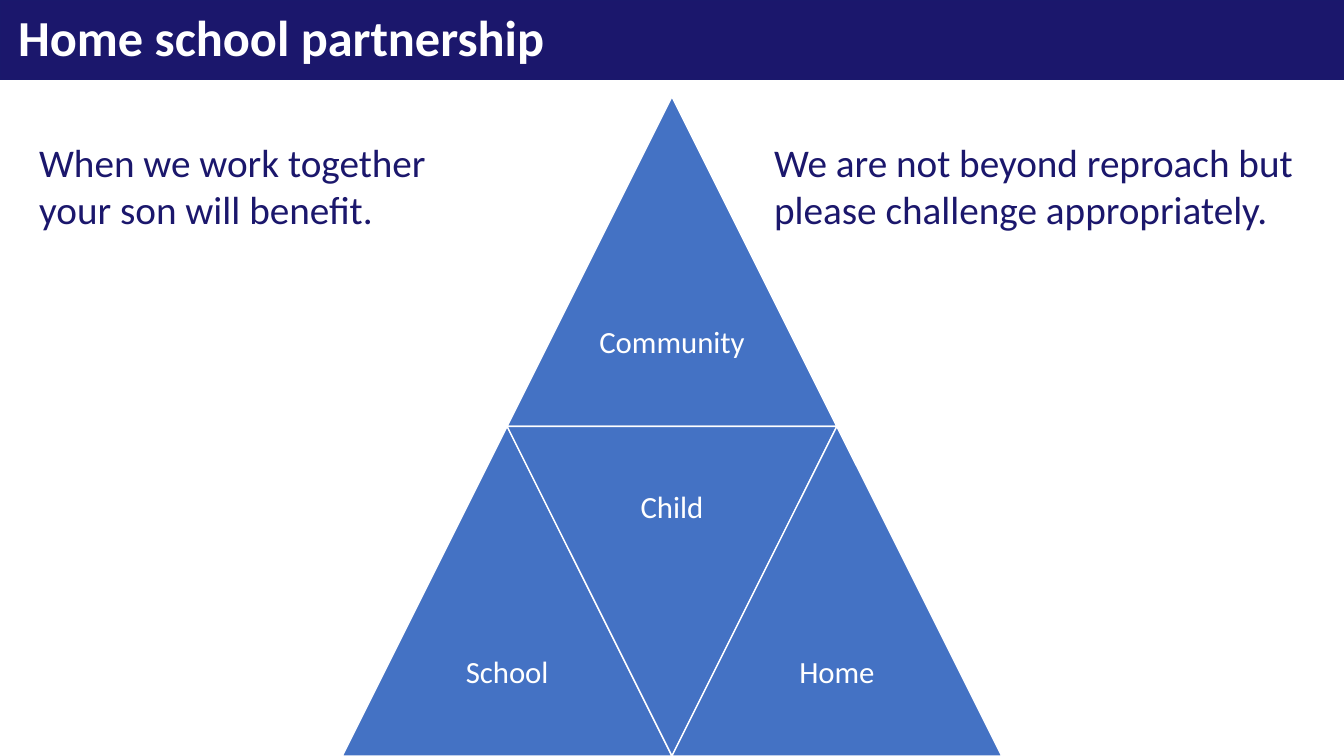
"""Build the home school partnership slide."""
from pptx import Presentation
from pptx.dml.color import RGBColor
from pptx.enum import shapes, text
from pptx.util import Inches, Pt

HUES = {"navy": "1B176C", "edge": "1A186C", "blue": "4472C4", "white": "FFFFFF"}
SHAPE = shapes.MSO_SHAPE
ALIGN = text.PP_ALIGN
ANCHOR = text.MSO_ANCHOR


def draw(kind, box, fill, line):
    item = slide.shapes.add_shape(kind, *map(Inches, box))
    item.shadow.inherit = False
    item.fill.solid()
    item.fill.fore_color.rgb = RGBColor.from_string(HUES[fill])
    item.line.color.rgb = RGBColor.from_string(HUES[line])
    item.line.width = Pt(1)
    return item


def write(item, words, size, hue, align=ALIGN.LEFT, anchor=ANCHOR.TOP, space=1.0, bold=False):
    frame = item.text_frame
    frame.word_wrap = True
    frame.auto_size = text.MSO_AUTO_SIZE.NONE
    frame.vertical_anchor = anchor
    frame.text = words
    para = frame.paragraphs[0]
    para.alignment = align
    para.line_spacing = space
    style = {"name": "Calibri", "size": Pt(size), "bold": bold}
    for key, value in style.items():
        setattr(para.font, key, value)
    para.font.color.rgb = RGBColor.from_string(HUES[hue])


deck = Presentation()
deck.slide_width, deck.slide_height = Inches(13.33), Inches(7.5)
slide = deck.slides.add_slide(deck.slide_layouts[5])

bar = draw(SHAPE.RECTANGLE, (0, 0, 13.33, 0.79), "navy", "edge")
title = slide.shapes.title
title._element.addprevious(bar._element)
title.left, title.top, title.width, title.height = map(Inches, (0.08, 0, 12.6, 0.79))
write(title, "Home school partnership", 36, "white", anchor=ANCHOR.MIDDLE, space=0.9, bold=True)

side, left, top = 3.27, 5.03, 0.96
half = side / 2
parts = [
    ("Community", 0, 0, False),
    ("School", -1, 1, False),
    ("Child", 0, 1, True),
    ("Home", 1, 1, False),
]
for name, col, row, turned in parts:
    x, y = left + col * half, top + row * side
    part = draw(SHAPE.ISOSCELES_TRIANGLE, (x, y, side, side), "blue", "white")
    part.rotation = 180 if turned else 0
    drop = 0 if turned else half
    label = slide.shapes.add_textbox(*map(Inches, (x + half / 2, y + drop, half, half)))
    label.text_frame.margin_left = label.text_frame.margin_right = Inches(0.08)
    write(label, name, 22, "white", ALIGN.CENTER, ANCHOR.MIDDLE, 0.9)

notes = [
    (0.29, 4.37, "When we work together your son will benefit."),
    (7.58, 5.47, "We are not beyond reproach but please challenge appropriately."),
]
for x, width, words in notes:
    note = slide.shapes.add_textbox(*map(Inches, (x, 1.32, width, 1.04)))
    write(note, words, 28, "navy")

deck.save("out.pptx")
